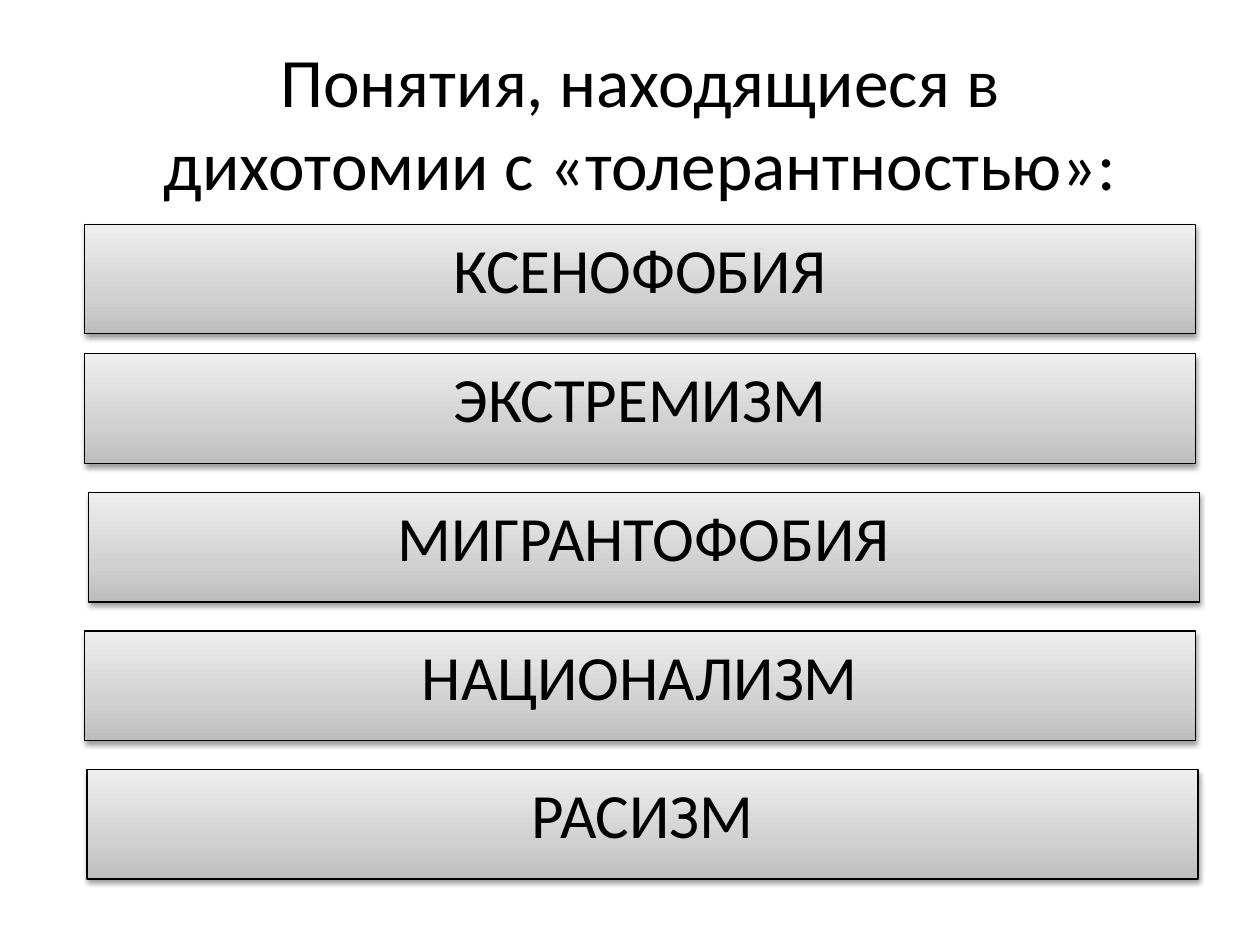
from pptx import Presentation
from pptx.dml.color import RGBColor
from pptx.enum.shapes import MSO_SHAPE as Shape
from pptx.enum.text import MSO_ANCHOR as Anchor, MSO_AUTO_SIZE as AutoSize, PP_ALIGN as Align
from pptx.oxml import parse_xml
from pptx.oxml.ns import qn
from pptx.util import Pt

COLORS = {"ink": "000000", "dark": "BDBDBD", "middle": "D1D1D1", "light": "EEEEEE"}
NS = 'xmlns:a="http://schemas.openxmlformats.org/drawingml/2006/main"'
GRADIENT = f"""<a:gradFill {NS} rotWithShape="1"><a:gsLst>
<a:gs pos="0"><a:srgbClr val="{COLORS['dark']}"/></a:gs>
<a:gs pos="35000"><a:srgbClr val="{COLORS['middle']}"/></a:gs>
<a:gs pos="100000"><a:srgbClr val="{COLORS['light']}"/></a:gs>
</a:gsLst><a:lin ang="16200000" scaled="1"/></a:gradFill>"""
SHADOW = f"""<a:effectLst {NS}>
<a:outerShdw blurRad="40000" dist="20000" dir="5400000" rotWithShape="0">
<a:srgbClr val="{COLORS['ink']}"><a:alpha val="38000"/></a:srgbClr>
</a:outerShdw></a:effectLst>"""


class ConceptSlide:
    font = "Calibri"
    bar_width, bar_height = 635, 62.6

    def __init__(self, slide):
        self.slide = slide

    def place(self, item, left, top, width, height):
        item.left, item.top = Pt(left), Pt(top)
        item.width, item.height = Pt(width), Pt(height)

    def set_text(self, item, text, size, anchor, space_before=0):
        frame = item.text_frame
        frame.text = text
        frame.word_wrap = True
        frame.auto_size = AutoSize.NONE
        frame.vertical_anchor = anchor
        line = frame.paragraphs[0]
        line.alignment = Align.CENTER
        line.space_before = Pt(space_before)
        line.font.name = self.font
        line.font.size = Pt(size)
        line.font.color.rgb = RGBColor.from_string(COLORS["ink"])

    def title(self, text):
        heading = self.slide.shapes.title
        self.place(heading, 59.8, 25.9, 612, 87.1)
        self.set_text(heading, text, 39.6, Anchor.MIDDLE)

    def bar(self, text, left, top, placeholder=None):
        bar = placeholder or self.slide.shapes.add_shape(Shape.RECTANGLE, 0, 0, 0, 0)
        self.place(bar, left, top, self.bar_width, self.bar_height)
        bar.line.color.rgb = RGBColor.from_string(COLORS["ink"])
        bar.line.width = Pt(0.75)
        # Three-stop gradient goes before the outline, the shadow after it
        outline = bar.element.spPr.find(qn("a:ln"))
        outline.addprevious(parse_xml(GRADIENT))
        outline.addnext(parse_xml(SHADOW))
        self.set_text(bar, text, 36, Anchor.TOP, space_before=2)


def main():
    deck = Presentation()
    deck.slide_width, deck.slide_height = Pt(720), Pt(540)
    page = deck.slides.add_slide(deck.slide_layouts[0])
    concepts = ConceptSlide(page)

    # Title
    concepts.title("Понятия, находящиеся в дихотомии с «толерантностью»:")

    # Opposed concepts: the first is the subtitle, the rest follow evenly
    concepts.bar("КСЕНОФОБИЯ", 48.2, 128.2, page.placeholders[1])
    others = [("ЭКСТРЕМИЗМ", 48.2), ("МИГРАНТОФОБИЯ", 50.4),
              ("НАЦИОНАЛИЗМ", 48.2), ("РАСИЗМ", 49.7)]
    first_top, step = 202.2, 79.2
    for row, (concept, left) in enumerate(others):
        concepts.bar(concept, left, first_top + row * step)

    deck.save("out.pptx")


if __name__ == "__main__":
    main()
